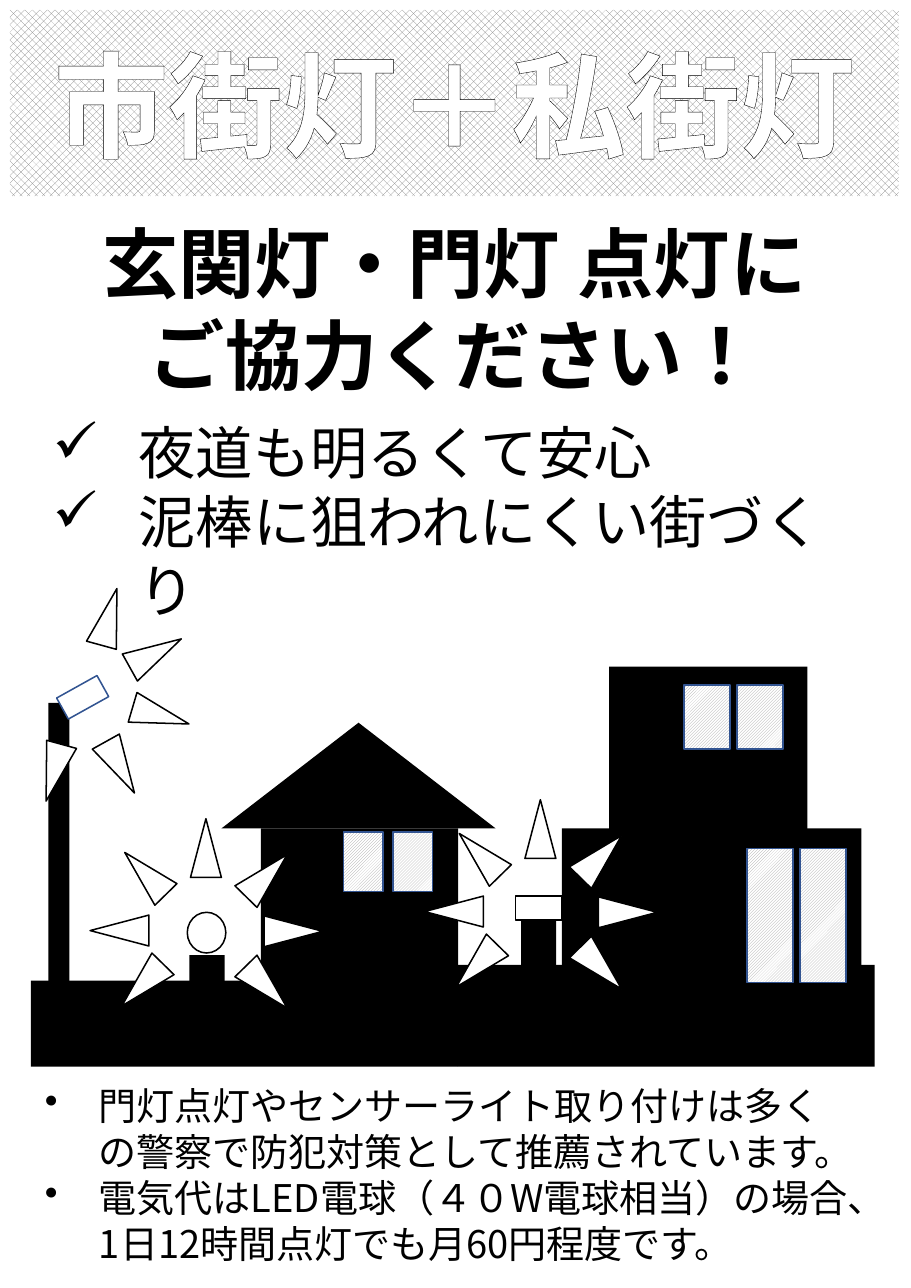
from math import cos, radians, sin

from lxml.etree import SubElement
from pptx import Presentation
from pptx.dml.color import RGBColor
from pptx.enum.dml import MSO_PATTERN
from pptx.enum.lang import MSO_LANGUAGE_ID
from pptx.enum.shapes import MSO_SHAPE
from pptx.enum.text import MSO_ANCHOR, PP_ALIGN
from pptx.oxml.ns import qn
from pptx.util import Pt

COLORS = {
    "black": "000000",
    "white": "FFFFFF",
    "hatch": "808080",
    "glass": "A6A6A6",
    "frame": "325491",
}
FONT = "Noto Sans CJK JP"
RAY_SIZE = (20.2, 38.4)
RAY_OFFSETS = {
    0: (0, -54.4),
    44.4: (39.6, -36.4),
    90: (57.2, 0),
    135.6: (39.6, 36.4),
    224.4: (-41.5, 35),
    270: (-56.5, -0.5),
    315.6: (-39.6, -37.8),
}
STREET_LAMP_TILT = 150.9


def color(name):
    return RGBColor.from_string(COLORS[name])


def apply_format(target, values):
    for name, value in values.items():
        setattr(target, name, value)


def add_shape(slide, kind, box, fill="black", line=None, rotation=0):
    shape = slide.shapes.add_shape(kind, *map(Pt, box))
    shape.shadow.inherit = False
    shape.rotation = rotation
    shape.fill.solid()
    shape.fill.fore_color.rgb = color(fill)
    if line:
        shape.line.color.rgb = color(line)
        shape.line.width = Pt(1)
    else:
        shape.line.fill.background()
    return shape


def set_pattern(shape, pattern, foreground):
    shape.fill.patterned()
    shape.fill.pattern = pattern
    shape.fill.fore_color.rgb = color(foreground)
    shape.fill.back_color.rgb = color("white")


def add_run(paragraph, text, size, bold=False, fill="black"):
    run = paragraph.add_run()
    run.text = text
    apply_format(run.font, {
        "name": FONT,
        "size": Pt(size),
        "bold": bold,
        "language_id": MSO_LANGUAGE_ID.JAPANESE,
    })
    run.font.color.rgb = color(fill)
    properties = run.font._element
    SubElement(properties, qn("a:ea")).set("typeface", FONT)
    return run


def add_text(slide, box, lines, size, spacing, top_margin,
             bold=False, align=PP_ALIGN.LEFT, bullet=None, indent=0):
    text_frame = slide.shapes.add_textbox(*map(Pt, box)).text_frame
    apply_format(text_frame, {"word_wrap": True, "margin_top": Pt(top_margin)})
    for index, line in enumerate(lines):
        paragraph = text_frame.paragraphs[0] if index == 0 else text_frame.add_paragraph()
        if bullet:
            properties = paragraph._p.get_or_add_pPr()
            properties.set("marL", str(Pt(indent)))
            properties.set("indent", str(-Pt(indent)))
            SubElement(properties, qn("a:buChar")).set("char", bullet)
        apply_format(paragraph, {"alignment": align, "line_spacing": Pt(spacing)})
        add_run(paragraph, line, size, bold)


def outline_run(run, line_color, width):
    properties = run.font._element
    line = SubElement(properties, qn("a:ln"), w=str(Pt(width)))
    fill = SubElement(line, qn("a:solidFill"))
    SubElement(fill, qn("a:srgbClr"), val=COLORS[line_color])
    properties.insert(0, line)


def add_banner(slide, text):
    banner = add_shape(slide, MSO_SHAPE.RECTANGLE, (6.5, 6.5, 581, 121.7))
    set_pattern(banner, MSO_PATTERN.PERCENT_50, "hatch")
    apply_format(banner.text_frame, {"vertical_anchor": MSO_ANCHOR.MIDDLE, "word_wrap": True})
    paragraph = banner.text_frame.paragraphs[0]
    paragraph.alignment = PP_ALIGN.CENTER
    outline_run(add_run(paragraph, text, 74.8, True, "white"), "black", 0.75)


def add_window_pair(slide, left, top, width, height, step):
    for column in range(2):
        pane = add_shape(slide, MSO_SHAPE.RECTANGLE,
                         (left + column * step, top, width, height), line="frame")
        set_pattern(pane, MSO_PATTERN.LIGHT_UPWARD_DIAGONAL, "glass")


def add_rays(slide, center_x, center_y, angles, tilt=0):
    width, height = RAY_SIZE
    cosine, sine = cos(radians(tilt)), sin(radians(tilt))
    for angle in angles:
        x, y = RAY_OFFSETS[angle]
        left = center_x + x * cosine - y * sine - width / 2
        top = center_y + x * sine + y * cosine - height / 2
        add_shape(slide, MSO_SHAPE.ISOSCELES_TRIANGLE, (left, top, width, height),
                  "white", "black", (angle + tilt) % 360)


def add_blocks(slide, boxes):
    for box in boxes:
        add_shape(slide, MSO_SHAPE.RECTANGLE, box)


def add_town(slide):
    add_blocks(slide, [
        (20.2, 640.8, 278.6, 56.2),
        (298.8, 630.5, 272.9, 66.5),
        (398.2, 435.6, 129.6, 118.8),
        (367.2, 541.4, 195.8, 118.8),
        (123.8, 624.2, 23, 56.2),
        (340.6, 601.2, 23, 56.2),
        (170.6, 541.4, 128.9, 118.8),
    ])
    add_shape(slide, MSO_SHAPE.ISOSCELES_TRIANGLE, (144.7, 472.3, 179.3, 69.1))
    add_window_pair(slide, 447.1, 447.8, 30.2, 41.8, 34.6)
    add_window_pair(slide, 488.2, 554.4, 30.2, 87.8, 34.6)
    add_window_pair(slide, 224.6, 543.6, 25.9, 38.9, 32.4)


def add_lamps(slide):
    add_shape(slide, MSO_SHAPE.RECTANGLE, (337, 585.4, 30.2, 15.8), "white", "black")
    add_rays(slide, 353.2, 596.2, RAY_OFFSETS)
    add_shape(slide, MSO_SHAPE.OVAL, (122.4, 596.2, 25.2, 26.6), "white", "black")
    add_rays(slide, 134.6, 608.6, RAY_OFFSETS)
    add_blocks(slide, [(31.7, 459.4, 13.7, 187.2)])
    add_shape(slide, MSO_SHAPE.RECTANGLE, (38.9, 447.8, 30.2, 15.8),
              "white", "frame", STREET_LAMP_TILT)
    add_rays(slide, 52.1, 453.9, (0, 44.4, 224.4, 270, 315.6), STREET_LAMP_TILT)


def main():
    presentation = Presentation()
    apply_format(presentation, {"slide_width": Pt(595.44), "slide_height": Pt(841.68)})
    slide = presentation.slides.add_slide(presentation.slide_layouts[6])
    add_text(slide, (34.6, 135.4, 524.9, 128.2),
             ["玄関灯・門灯 点灯に", "ご協力ください！"],
             49.9, 60, 5.6, bold=True, align=PP_ALIGN.CENTER)
    add_text(slide, (27.4, 267.8, 554.4, 97.9),
             ["夜道も明るくて安心", "泥棒に狙われにくい街づくり"],
             37.4, 45, 5, bullet="✓", indent=56.2)
    add_text(slide, (22.3, 702.7, 540.7, 128.2),
             ["門灯点灯やセンサーライト取り付けは多くの警察で防犯対策として推薦されています。",
              "電気代はLED電球（４０W電球相当）の場合、1日12時間点灯でも月60円程度です。"],
             24.9, 30, 4.6, bullet="•", indent=35.3)
    add_banner(slide, "市街灯＋私街灯")
    add_town(slide)
    add_lamps(slide)
    presentation.save("out.pptx")


if __name__ == "__main__":
    main()
